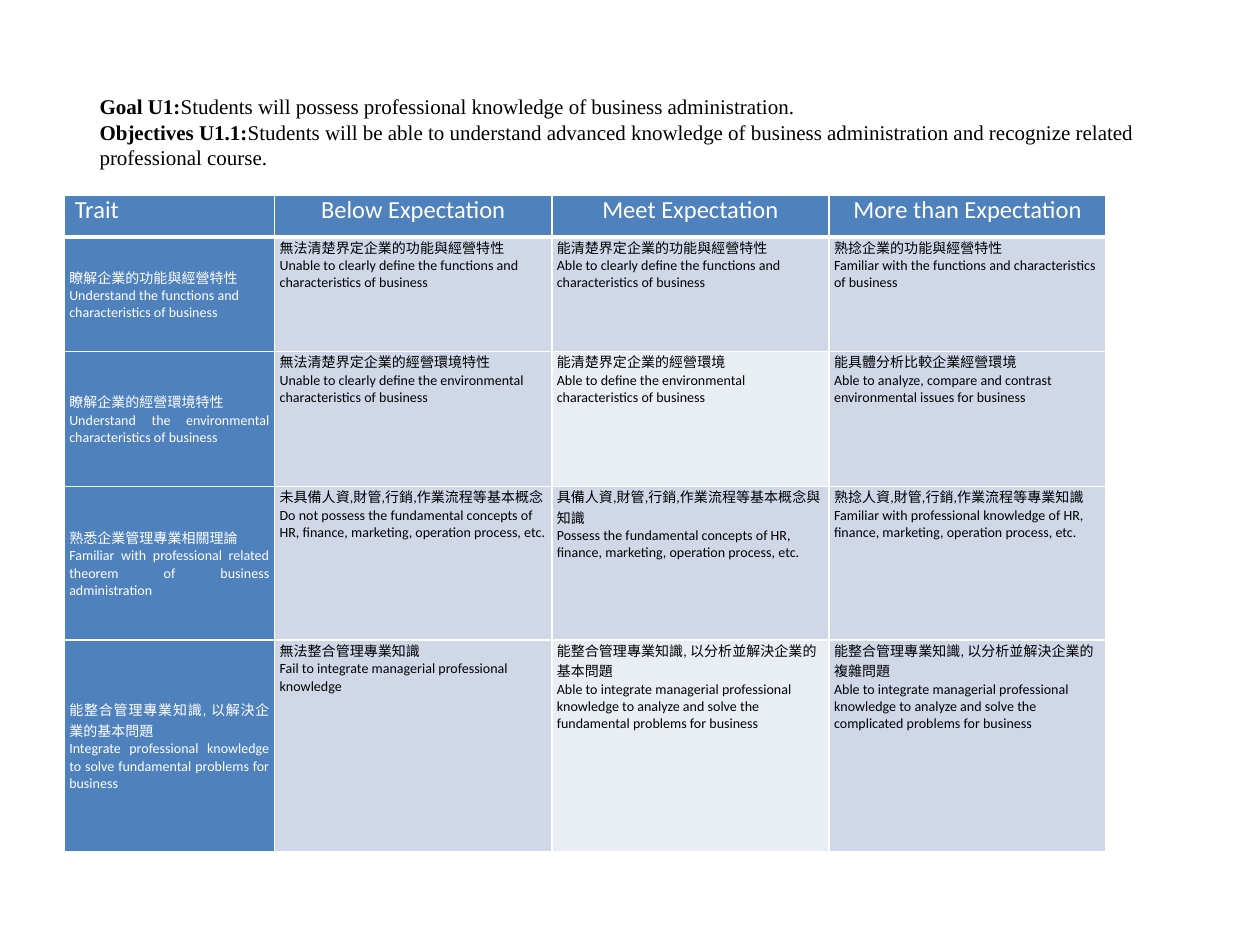
from lxml.etree import SubElement
from pptx import Presentation
from pptx.dml.color import RGBColor
from pptx.enum.text import MSO_ANCHOR, MSO_AUTO_SIZE, PP_ALIGN
from pptx.oxml.ns import qn
from pptx.util import Inches, Pt

SLIDE_WIDTH, SLIDE_HEIGHT = 10, 7.5
TITLE_ONLY = 5
BLUE, PALE_BLUE, LIGHT_BLUE = "4F81BD", "D0D8E8", "E9EDF4"
WHITE, BLACK = "FFFFFF", "000000"
COLUMN_WIDTHS = [1.67, 2.2, 2.2, 2.2]
ROW_HEIGHTS = [0.33, 0.91, 1.07, 1.22, 1.68]
LIGHT_CELLS = {(2, 2), (4, 2)}

GOALS = [
    ("Goal U1:", "Students will possess professional knowledge of business administration."),
    ("Objectives U1.1:", "Students will be able to understand advanced knowledge of business "
     "administration and recognize related professional course. "),
]
HEADINGS = [" Trait", "Below Expectation", "Meet Expectation", "More than Expectation"]
TRAITS = [
    [("瞭解企業的功能與經營特性", "Understand the functions and characteristics of business"),
     ("無法清楚界定企業的功能與經營特性",
      "Unable to clearly define the functions and characteristics of business"),
     ("能清楚界定企業的功能與經營特性",
      "Able to clearly define the functions and characteristics of business"),
     ("熟捻企業的功能與經營特性",
      "Familiar with the functions and characteristics of business")],
    [("瞭解企業的經營環境特性", "Understand the environmental characteristics of business"),
     ("無法清楚界定企業的經營環境特性",
      "Unable to clearly define the environmental characteristics of business"),
     ("能清楚界定企業的經營環境",
      "Able to define the environmental characteristics of business"),
     ("能具體分析比較企業經營環境",
      "Able to analyze, compare and contrast environmental issues for business")],
    [("熟悉企業管理專業相關理論",
      "Familiar with professional related theorem of business administration"),
     ("未具備人資,財管,行銷,作業流程等基本概念",
      "Do not possess the fundamental concepts of HR, finance, marketing, operation process, etc."),
     ("具備人資,財管,行銷,作業流程等基本概念與知識",
      "Possess the fundamental concepts of HR, finance, marketing, operation process, etc."),
     ("熟捻人資,財管,行銷,作業流程等專業知識",
      "Familiar with professional knowledge of HR, finance, marketing, operation process, etc.")],
    [("能整合管理專業知識, 以解決企業的基本問題",
      "Integrate professional knowledge to solve fundamental problems for business "),
     ("無法整合管理專業知識", "Fail to integrate managerial professional knowledge"),
     ("能整合管理專業知識, 以分析並解決企業的基本問題",
      "Able to integrate managerial professional knowledge to analyze and solve the "
      "fundamental problems for business"),
     ("能整合管理專業知識, 以分析並解決企業的複雜問題",
      "Able to integrate managerial professional knowledge to analyze and solve the "
      "complicated problems for business")],
]


def color(value):
    return RGBColor.from_string(value)


def add_run(paragraph, text, size, font_name, font_color, bold=False):
    run = paragraph.add_run()
    run.text = text
    run.font.size = Pt(size)
    run.font.name = font_name
    run.font.color.rgb = color(font_color)
    run.font.bold = bold


def next_paragraph(text_frame, index):
    return text_frame.add_paragraph() if index else text_frame.paragraphs[0]


def add_title(slide):
    title = slide.shapes.title
    title.left, title.top = Inches(0.69), Inches(0.42)
    title.width, title.height = Inches(8.62), Inches(1.45)
    text_frame = title.text_frame
    text_frame.word_wrap = True
    text_frame.auto_size = MSO_AUTO_SIZE.NONE
    text_frame.vertical_anchor = MSO_ANCHOR.MIDDLE
    text_frame.margin_bottom = Inches(0.25)
    for index, (label, statement) in enumerate(GOALS):
        paragraph = next_paragraph(text_frame, index)
        paragraph.alignment = PP_ALIGN.LEFT
        paragraph.space_before = Pt(0)
        add_run(paragraph, label, 12, "Times New Roman", BLACK, True)
        add_run(paragraph, statement, 12, "Times New Roman", BLACK)


def set_borders(cell, bottom_width):
    properties = cell._tc.get_or_add_tcPr()
    for side, width in (("L", 1), ("R", 1), ("T", 1), ("B", bottom_width)):
        line = SubElement(properties, qn(f"a:ln{side}"), w=str(Pt(width)))
        fill = SubElement(line, qn("a:solidFill"))
        SubElement(fill, qn("a:srgbClr"), val=WHITE)


def fill_cell(cell, texts, size, fill_color, font_color, alignment, anchor, bottom_width=1):
    cell.margin_left = cell.margin_right = Inches(0.04)
    cell.margin_top = cell.margin_bottom = 0
    cell.vertical_anchor = anchor
    set_borders(cell, bottom_width)
    cell.fill.solid()
    cell.fill.fore_color.rgb = color(fill_color)
    for index, text in enumerate(texts):
        paragraph = next_paragraph(cell.text_frame, index)
        paragraph.alignment = alignment
        add_run(paragraph, text, size, "Calibri", font_color)


def add_rubric(slide):
    table = slide.shapes.add_table(
        len(ROW_HEIGHTS), len(COLUMN_WIDTHS), Inches(0.51), Inches(1.55),
        Inches(sum(COLUMN_WIDTHS)), Inches(sum(ROW_HEIGHTS))).table
    for column, width in zip(table.columns, COLUMN_WIDTHS):
        column.width = Inches(width)
    for row, height in zip(table.rows, ROW_HEIGHTS):
        row.height = Inches(height)
    for column, heading in enumerate(HEADINGS):
        alignment = PP_ALIGN.CENTER if column else PP_ALIGN.LEFT
        fill_cell(table.cell(0, column), [heading], 14, BLUE, WHITE, alignment, MSO_ANCHOR.TOP, 3)
    for row, levels in enumerate(TRAITS, start=1):
        trait_alignment = PP_ALIGN.LEFT if row == 1 else PP_ALIGN.JUSTIFY
        fill_cell(table.cell(row, 0), levels[0], 8, BLUE, WHITE, trait_alignment, MSO_ANCHOR.MIDDLE)
        for column, texts in enumerate(levels[1:], start=1):
            shade = LIGHT_BLUE if (row, column) in LIGHT_CELLS else PALE_BLUE
            fill_cell(table.cell(row, column), texts, 8, shade, BLACK, PP_ALIGN.LEFT, MSO_ANCHOR.TOP)


def main():
    presentation = Presentation()
    presentation.slide_width = Inches(SLIDE_WIDTH)
    presentation.slide_height = Inches(SLIDE_HEIGHT)
    slide = presentation.slides.add_slide(presentation.slide_layouts[TITLE_ONLY])
    add_title(slide)
    add_rubric(slide)
    presentation.save("out.pptx")


if __name__ == "__main__":
    main()
